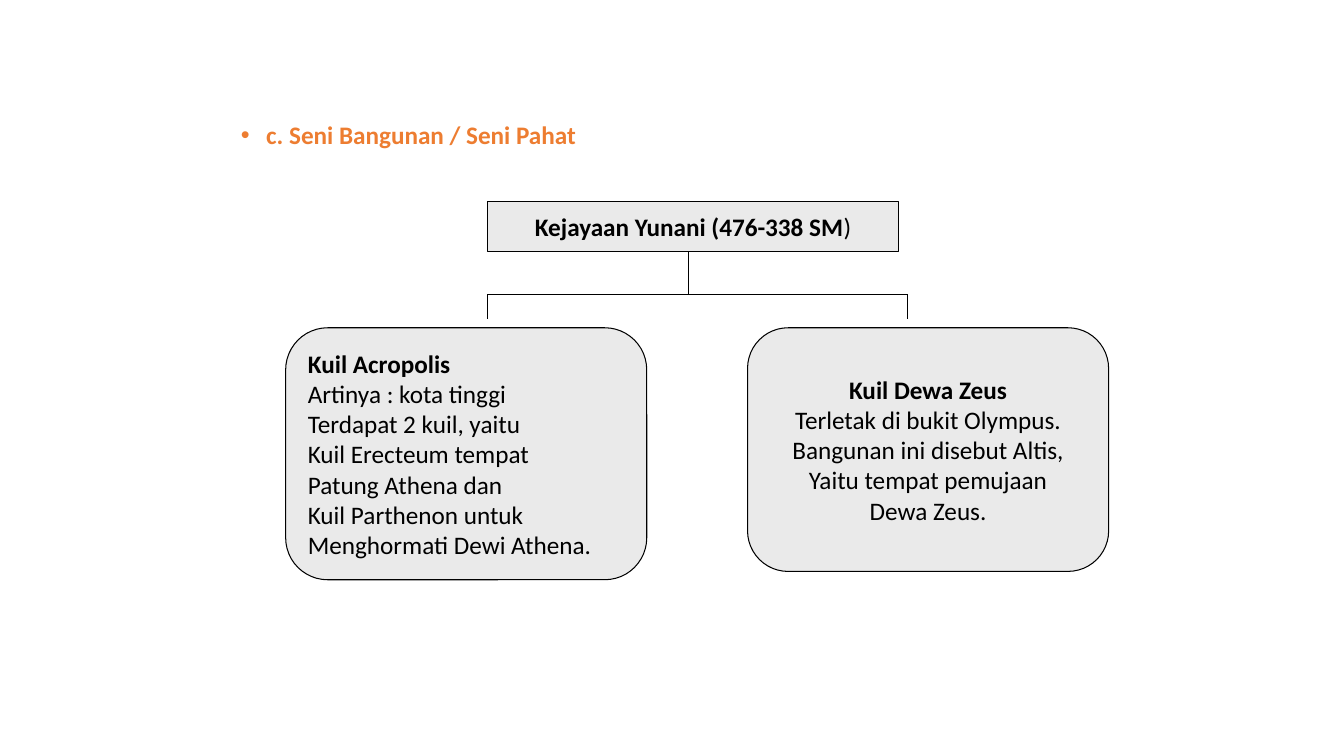
from lxml.etree import SubElement
from pptx import Presentation
from pptx.dml.color import RGBColor
from pptx.enum.shapes import MSO_CONNECTOR, MSO_SHAPE
from pptx.enum.text import MSO_ANCHOR, PP_ALIGN
from pptx.oxml.ns import qn
from pptx.util import Cm, Pt

COLORS = {"accent": "ED7D31", "box": "EAEAEA", "ink": "000000"}


class Diagram:
    """Draw the elements of a tree diagram on one slide in a shared style."""

    def __init__(self, slide, font="Calibri", size=18, line=0.75):
        self.s, self.font, self.size, self.line = slide, font, size, line

    def color(self, name):
        return RGBColor.from_string(COLORS[name])

    def style(self, r, color="ink", bold=False):
        r.font.name, r.font.size, r.font.bold = self.font, Pt(self.size), bold
        r.font.color.rgb = self.color(color)

    def outline(self, sp):
        sp.line.color.rgb = self.color("ink")
        sp.line.width = Pt(self.line)

    def bullet(self, text, x, y, w, h):
        tf = self.s.shapes.add_textbox(Cm(x), Cm(y), Cm(w), Cm(h)).text_frame
        tf.word_wrap = True
        p = tf.paragraphs[0]
        p.text = text
        p.line_spacing = 0.9
        pPr = p._p.get_or_add_pPr()
        pPr.set("marL", str(Cm(0.64)))
        pPr.set("indent", str(Cm(-0.64)))
        SubElement(pPr, qn("a:buFont"), typeface="Arial")
        SubElement(pPr, qn("a:buChar"), char="•")
        self.style(p.runs[0], "accent", True)

    def box(self, kind, lines, x, y, w, h, align=PP_ALIGN.CENTER):
        sp = self.s.shapes.add_shape(kind, Cm(x), Cm(y), Cm(w), Cm(h))
        sp.shadow.inherit = False
        sp.fill.solid()
        sp.fill.fore_color.rgb = self.color("box")
        self.outline(sp)
        tf = sp.text_frame
        tf.word_wrap = False
        tf.vertical_anchor = MSO_ANCHOR.MIDDLE
        tf.text = "\n".join(lines)
        for i, p in enumerate(tf.paragraphs):
            p.alignment = align
            self.style(p.runs[0], bold=i == 0)
        return sp

    def segment(self, x1, y1, x2, y2):
        sp = self.s.shapes.add_connector(
            MSO_CONNECTOR.STRAIGHT, Cm(x1), Cm(y1), Cm(x2), Cm(y2))
        self.outline(sp)
        SubElement(sp._element.spPr, qn("a:effectLst"))


def main():
    prs = Presentation()
    prs.slide_width, prs.slide_height = Cm(33.87), Cm(19.05)
    d = Diagram(prs.slides.add_slide(prs.slide_layouts[6]))

    d.bullet("c. Seni Bangunan / Seni Pahat", 5.82, 2.97, 22.23, 1.2)
    root = d.box(MSO_SHAPE.RECTANGLE, ["Kejayaan Yunani (476-338 SM"],
                 12.28, 5.08, 10.37, 1.27)
    r = root.text_frame.paragraphs[0].add_run()
    r.text = ")"
    d.style(r)

    card, top, width = MSO_SHAPE.FLOWCHART_ALTERNATE_PROCESS, 8.26, 9.1
    d.box(card, ["Kuil Acropolis", "Artinya : kota tinggi",
                 "Terdapat 2 kuil, yaitu", "Kuil Erecteum tempat",
                 "Patung Athena dan", "Kuil Parthenon untuk",
                 "Menghormati Dewi Athena."],
          7.2, top, width, 6.35, PP_ALIGN.LEFT)
    d.box(card, ["Kuil Dewa Zeus", "Terletak di bukit Olympus.",
                 "Bangunan ini disebut Altis,", "Yaitu tempat pemujaan",
                 "Dewa Zeus."],
          18.84, top, width, 6.14)

    stem, left, right = 17.36, 12.28, 22.86
    start, fork, end = 6.35, 7.41, 8.04
    d.segment(stem, start, stem, fork)
    d.segment(left, fork, right, fork)
    for x in (left, right):
        d.segment(x, fork, x, end)

    prs.save("out.pptx")


if __name__ == "__main__":
    main()
